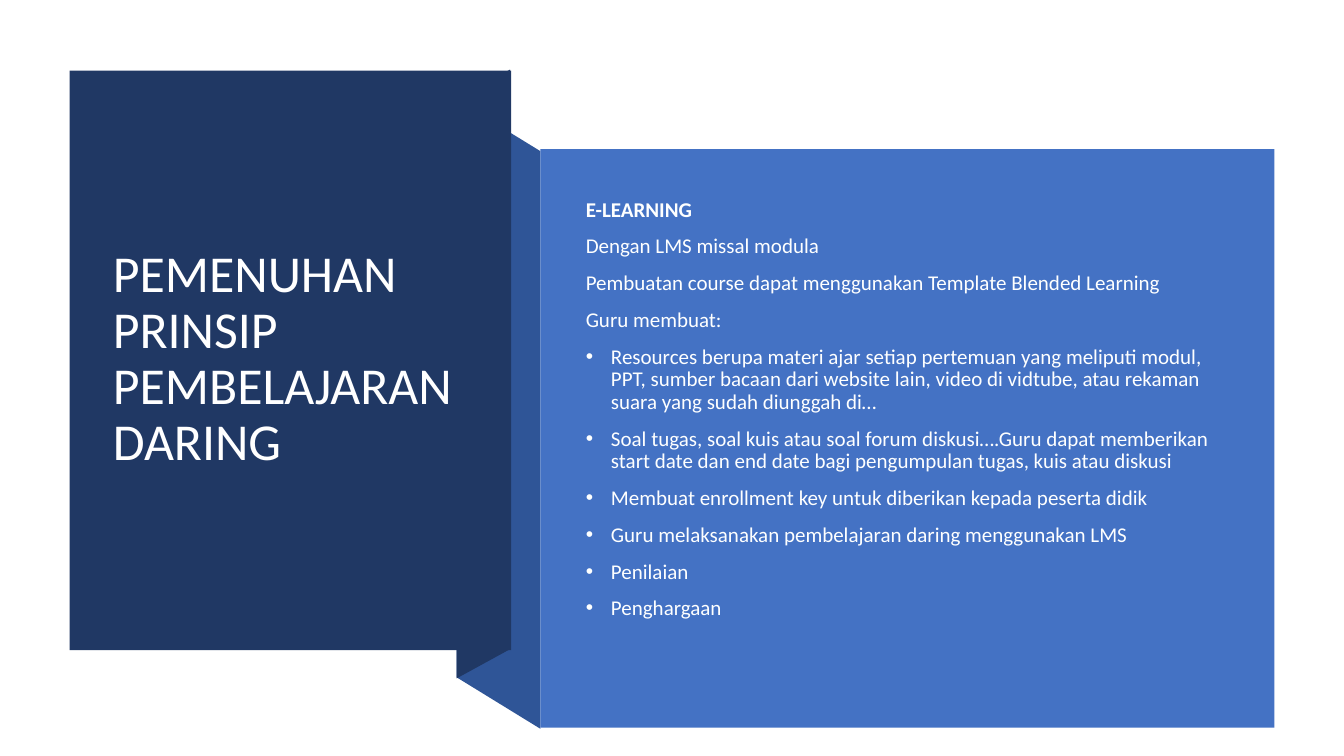
"""Build a folded-ribbon slide on the principles of online learning."""
from lxml import etree
from pptx import Presentation
from pptx.dml.color import RGBColor
from pptx.enum.shapes import MSO_SHAPE
from pptx.enum.text import MSO_ANCHOR, MSO_AUTO_SIZE, PP_ALIGN
from pptx.oxml.ns import qn
from pptx.util import Inches, Pt

NAVY = RGBColor(0x20, 0x38, 0x64)
FOLD_BLUE = RGBColor(0x2F, 0x55, 0x97)
PANEL_BLUE = RGBColor(0x44, 0x72, 0xC4)
WHITE = RGBColor(0xFF, 0xFF, 0xFF)
SOFT_WHITE = RGBColor(0xFE, 0xFF, 0xFF)
RECTANGLE = MSO_SHAPE.RECTANGLE
MIDDLE = MSO_ANCHOR.MIDDLE
NO_AUTOFIT = MSO_AUTO_SIZE.NONE
LEFT = PP_ALIGN.LEFT
FONT = "Calibri"
INDENT = Inches(0.25)

FOLD_LEFT, CARD_RIGHT, PANEL_LEFT = 4.53, 5.06, 5.36
FOLDS = [
    ([(PANEL_LEFT, 7.23), (FOLD_LEFT, 6.72), (FOLD_LEFT, 0.99), (PANEL_LEFT, 1.5)], FOLD_BLUE),
    ([(CARD_RIGHT, 6.44), (FOLD_LEFT, 6.73), (FOLD_LEFT, 0.98), (CARD_RIGHT, 0.69)], NAVY),
]
PANELS = [
    ((0.69, 0.7, 4.38, 5.75), NAVY),
    ((PANEL_LEFT, 1.48, 7.28, 5.74), PANEL_BLUE),
]
INTRO = [
    "E-LEARNING",
    "Dengan LMS missal modula",
    "Pembuatan course dapat menggunakan Template Blended Learning",
    "Guru membuat:",
]
TASKS = [
    "Resources berupa materi ajar setiap pertemuan yang meliputi modul, PPT, sumber bacaan "
    "dari website lain, video di vidtube, atau rekaman suara yang sudah diunggah di…",
    "Soal tugas, soal kuis atau soal forum diskusi….Guru dapat memberikan start date dan "
    "end date bagi pengumpulan tugas, kuis atau diskusi",
    "Membuat enrollment key untuk diberikan kepada peserta didik",
    "Guru melaksanakan pembelajaran daring menggunakan LMS",
    "Penilaian",
    "Penghargaan",
]


def paint(shape, color):
    shape.fill.solid()
    shape.fill.fore_color.rgb = color
    shape.line.fill.background()
    shape.shadow.inherit = False


def place_text(box, bounds, lines, size, color):
    box.left, box.top, box.width, box.height = map(Inches, bounds)
    frame = box.text_frame
    frame.text = "\n".join(lines)
    frame.word_wrap = True
    frame.auto_size = NO_AUTOFIT
    frame.vertical_anchor = MIDDLE
    for para in frame.paragraphs:
        para.alignment = LEFT
        para.line_spacing = 0.9
        para.font.name = FONT
        para.font.size = Pt(size)
        para.font.color.rgb = color
    return frame


deck = Presentation()
deck.slide_width, deck.slide_height = Inches(13.33), Inches(7.5)
page = deck.slides.add_slide(deck.slide_layouts[1])
title, body = page.placeholders

for corners, color in FOLDS:
    points = [(Inches(x), Inches(y)) for x, y in corners]
    builder = page.shapes.build_freeform(*points[0])
    builder.add_line_segments(points[1:], close=True)
    paint(builder.convert_to_shape(), color)

for bounds, color in PANELS:
    paint(page.shapes.add_shape(RECTANGLE, *map(Inches, bounds)), color)

for box in (title, body):
    page.shapes._spTree.append(box._element)

place_text(title, (1.02, 1.07, 3.71, 4.99), ["PEMENUHAN PRINSIP PEMBELAJARAN DARING"], 37, WHITE)
content = place_text(body, (5.71, 1.88, 6.51, 4.74), INTRO + TASKS, 15, SOFT_WHITE)
content.margin_bottom = Inches(0.42)
content.paragraphs[0].font.bold = True

for index, para in enumerate(content.paragraphs):
    para.space_before = Pt(10)
    settings = para._p.get_or_add_pPr()
    bulleted = index >= len(INTRO)
    settings.set("marL", str(INDENT if bulleted else 0))
    settings.set("indent", str(-INDENT if bulleted else 0))
    bullet = etree.Element(qn("a:buChar" if bulleted else "a:buNone"))
    if bulleted:
        bullet.set("char", "•")
    settings.find(qn("a:defRPr")).addprevious(bullet)

deck.save("out.pptx")
